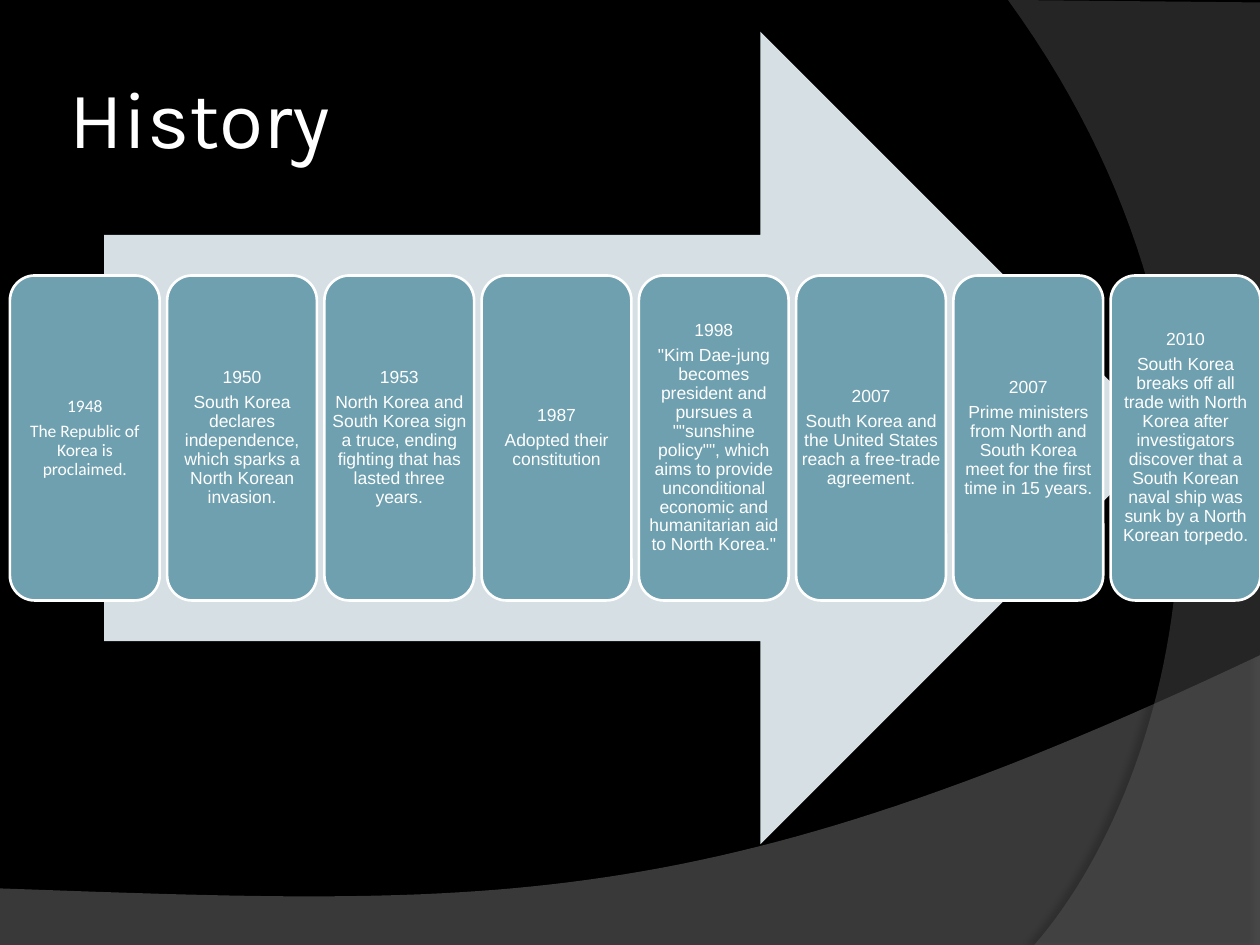
from lxml.etree import SubElement
from pptx import Presentation
from pptx.dml.color import RGBColor
from pptx.enum.shapes import MSO_SHAPE
from pptx.enum.text import MSO_ANCHOR, PP_ALIGN
from pptx.oxml.ns import qn
from pptx.util import Cm, Pt

BLACK = RGBColor(0x00, 0x00, 0x00)
WHITE = RGBColor(0xFF, 0xFF, 0xFF)
TEAL = RGBColor(0x6E, 0xA0, 0xB0)
PALE = RGBColor(0xD5, 0xDF, 0xE4)
GREY = RGBColor(0x7F, 0x7F, 0x7F)
DARK_GREY = RGBColor(0x5E, 0x5E, 0x5E)

PAGE_WIDTH, PAGE_HEIGHT = 25.4, 19.05
CARD_GAP = 0.15
CURVE_STEPS = 60

EVENTS = [
    ("1948", "The Republic of Korea is proclaimed.", "Calibri"),
    ("1950", "South Korea declares independence, which sparks a North Korean invasion.", "Arial"),
    ("1953", "North Korea and South Korea sign a truce, ending fighting that has lasted three years.", "Arial"),
    ("1987", "Adopted their constitution", "Arial"),
    ("1998", '"Kim Dae-jung becomes president and pursues a ""sunshine policy"", which aims to '
             'provide unconditional economic and humanitarian aid to North Korea."', "Arial"),
    ("2007", "South Korea and the United States reach a free-trade agreement.", "Arial"),
    ("2007", "Prime ministers from North and South Korea meet for the first time in 15 years.", "Arial"),
    ("2010", "South Korea breaks off all trade with North Korea after investigators discover "
             "that a South Korean naval ship was sunk by a North Korean torpedo.", "Arial"),
]


def add_text(page, box, lines, font, size, inset, align=PP_ALIGN.LEFT, leading=1.0, after=0):
    frame = page.shapes.add_textbox(*map(Cm, box)).text_frame
    frame.word_wrap = True
    frame.vertical_anchor = MSO_ANCHOR.MIDDLE
    frame.margin_left = frame.margin_right = Cm(inset)
    frame.margin_top = frame.margin_bottom = Cm(inset)
    for index, line in enumerate(lines):
        para = frame.add_paragraph() if index else frame.paragraphs[0]
        para.alignment = align
        para.line_spacing = leading
        para.space_after = Pt(after)
        span = para.add_run()
        span.text = line
        span.font.name = font
        span.font.size = Pt(size)
        span.font.color.rgb = WHITE


def add_block(page, kind, box, fill, line=None):
    block = page.shapes.add_shape(kind, *map(Cm, box))
    block.shadow.inherit = False
    block.fill.solid()
    block.fill.fore_color.rgb = fill
    if line is None:
        block.line.fill.background()
    else:
        block.line.color.rgb = line
        block.line.width = Pt(1.5)


def curve_points(start, first, second, end):
    points = []
    for step in range(CURVE_STEPS + 1):
        t = step / CURVE_STEPS
        weights = ((1 - t) ** 3, 3 * t * (1 - t) ** 2, 3 * t * t * (1 - t), t ** 3)
        pairs = list(zip(weights, (start, first, second, end)))
        points.append(tuple(Cm(sum(w * point[axis] for w, point in pairs)) for axis in (0, 1)))
    return points


def add_swoosh(page, corners, curve, fill, opacity, shadow_opacity, distance, direction):
    points = [(Cm(x), Cm(y)) for x, y in corners] + curve_points(*curve)
    builder = page.shapes.build_freeform(*points[0], scale=1.0)
    builder.add_line_segments(points[1:], close=True)
    swoosh = builder.convert_to_shape()
    swoosh.shadow.inherit = False
    swoosh.line.fill.background()
    swoosh.fill.solid()
    swoosh.fill.fore_color.rgb = fill
    properties = swoosh.element.spPr
    color = properties.find(qn("a:solidFill")).find(qn("a:srgbClr"))
    SubElement(color, qn("a:alpha"), val=str(opacity * 1000))
    shadow = SubElement(
        properties.find(qn("a:effectLst")), qn("a:outerShdw"),
        blurRad=str(Pt(4)), dist=str(Pt(distance)), dir=str(direction * 60000),
        algn="ctr", rotWithShape="0",
    )
    shadow_color = SubElement(shadow, qn("a:srgbClr"), val=str(BLACK))
    SubElement(shadow_color, qn("a:alpha"), val=str(shadow_opacity * 1000))


def add_backdrop(page, box):
    left, top, width, height = box
    right, bottom = left + width, top + height
    add_swoosh(
        page, [(left, bottom), (right, bottom)],
        ((right, top + 13.21), (left + 14.2, top + 18.52),
         (left + 9.93, top + 18.26), (left, top + 17.91)),
        GREY, 45, 35, 3.5, 270,
    )
    add_swoosh(
        page, [(right, top + 0.05), (right, bottom)],
        ((left + 20.85, bottom), (left + 23.75, top + 15.72),
         (left + 25.86, top + 7.62), (left + 20.32, top)),
        DARK_GREY, 40, 45, 4, 180,
    )


def add_card(page, box, year, event, font):
    add_block(page, MSO_SHAPE.ROUNDED_RECTANGLE, box, TEAL, WHITE)
    add_text(page, box, [year, event], font, 10, 0.1,
             align=PP_ALIGN.CENTER, leading=0.9, after=3.5)


def add_timeline(page, box):
    left, top, width, height = box
    add_block(page, MSO_SHAPE.RIGHT_ARROW, (left + 1.9, top, 21.42, height), PALE)
    card_width = (width - CARD_GAP * (len(EVENTS) - 1)) / len(EVENTS)
    card_height = height * 0.4
    card_top = top + (height - card_height) / 2
    for index, event in enumerate(EVENTS):
        card_left = left + index * (card_width + CARD_GAP)
        add_card(page, (card_left, card_top, card_width, card_height), *event)


def main():
    deck = Presentation()
    deck.slide_width, deck.slide_height = Cm(PAGE_WIDTH), Cm(PAGE_HEIGHT)
    page = deck.slides.add_slide(deck.slide_layouts[6])
    page.background.fill.solid()
    page.background.fill.fore_color.rgb = BLACK
    add_backdrop(page, (0, 0, PAGE_WIDTH, PAGE_HEIGHT))
    add_text(page, (1.27, 0.76, 20.75, 3.18), ["History"], "Karla", 46, 0.13)
    add_timeline(page, (0.2, 0.64, 25.21, 16.38))
    deck.save("out.pptx")


if __name__ == "__main__":
    main()
